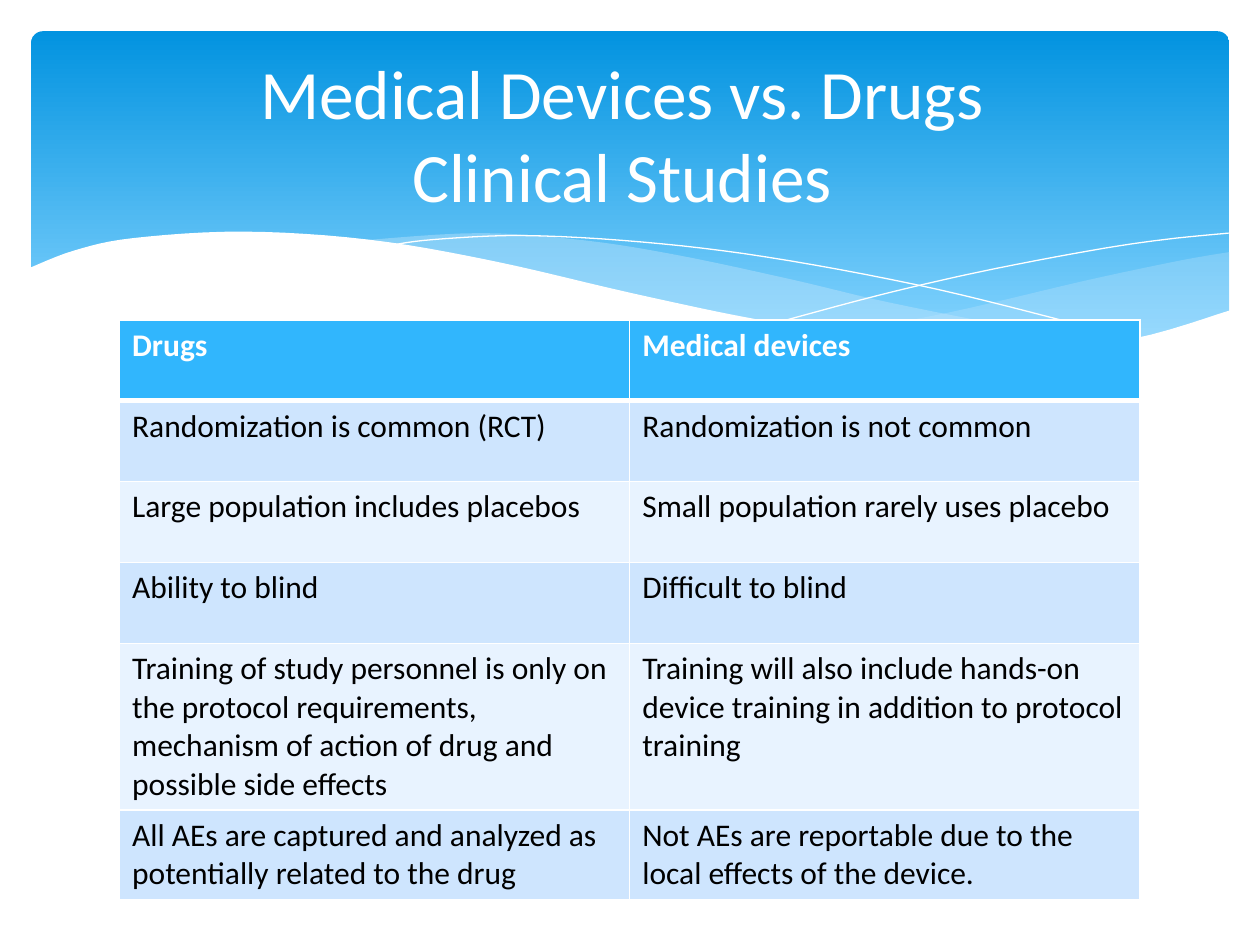
import pptx
import pptx.util
import pptx.dml.color
import pptx.enum.shapes
import pptx.enum.text
import pptx.oxml
import pptx.oxml.ns
from lxml import etree

Cm, Pt = pptx.util.Cm, pptx.util.Pt
RGBColor = pptx.dml.color.RGBColor

FONT = "Calibri"
WHITE = RGBColor(0xFF, 0xFF, 0xFF)
BLACK = RGBColor(0, 0, 0)
BANNER_TOP = RGBColor(0x02, 0x93, 0xE0)
BANNER_BOTTOM = RGBColor(0x83, 0xD3, 0xFE)
WAVE = RGBColor(0xC6, 0xE7, 0xFC)
HEADER = RGBColor(0x31, 0xB6, 0xFD)
BANDS = (RGBColor(0xCE, 0xE5, 0xFE), RGBColor(0xE8, 0xF3, 0xFF))

# Curves are lists of (x, y) anchors in centimetres.
RIGHT_WAVE_TOP = [(24.79, 5.08), (23.75, 5.26), (21.87, 5.66), (19.13, 6.3), (16.79, 6.73)]
RIGHT_WAVE_BOTTOM = [(16.79, 6.73), (18.26, 6.91), (20.07, 7.04), (21.69, 7.01),
                     (23.19, 6.78), (24.79, 6.27)]
MIDDLE_WAVE_TOP = [(22.68, 6.93), (20.5, 6.6), (17.93, 6.1), (15.98, 5.64),
                   (13.74, 5.16), (11.81, 4.85), (9.65, 4.7), (7.26, 4.85)]
MIDDLE_WAVE_BOTTOM = [(7.26, 4.85), (9.19, 5.16), (11.4, 5.64), (14.38, 6.3),
                      (16.89, 6.76), (19, 7.01), (20.78, 7.06), (22.68, 6.93)]
FALLING_LINE = [(7.85, 4.95), (8.74, 4.83), (10.57, 4.75), (12.95, 4.88),
                (15.44, 5.18), (18.47, 5.74), (21.11, 6.38), (23.04, 6.91)]
RISING_LINE = [(15.57, 6.53), (17.65, 5.97), (19.71, 5.49), (22, 5.05),
               (23.47, 4.83), (24.77, 4.7)]
WHITE_WAVE_TOP = [(0.58, 5.41), (1.5, 5.05), (2.69, 4.8), (4.9, 4.67), (7.42, 4.83),
                  (9.93, 5.26), (12.78, 5.92), (15.32, 6.45), (17.98, 6.86),
                  (20.55, 7.04), (22.83, 6.83), (24.82, 6.25)]
WHITE_WAVE_CORNERS = [(24.82, 8.36), (0.58, 8.36)]

COMPARISON = [
    ("Drugs", "Medical devices"),
    ("Randomization is common (RCT)", "Randomization is not common"),
    ("Large population includes placebos", "Small population rarely uses placebo"),
    ("Ability to blind", "Difficult to blind"),
    ("Training of study personnel is only on the protocol requirements, "
     "mechanism of action of drug and possible side effects",
     "Training will also include hands-on device training in addition to protocol training"),
    ("All AEs are captured and analyzed as potentially related to the drug",
     "Not AEs are reportable due to the local effects of the device."),
]


def smooth(anchors, steps=6):
    """Return points along a Catmull-Rom curve through the anchors."""
    padded = [anchors[0], *anchors, anchors[-1]]
    points = []
    for a, b, c, d in zip(padded, padded[1:], padded[2:], padded[3:]):
        for step in range(steps):
            t = step / steps
            points.append(tuple(
                (2 * q + (r - p) * t + (2 * p - 5 * q + 4 * r - s) * t ** 2
                 + (3 * q - p - 3 * r + s) * t ** 3) / 2
                for p, q, r, s in zip(a, b, c, d)))
    return points + [anchors[-1]]


def write_text(frame, text, size, color, bold=False, align=None):
    frame.text = text
    frame.word_wrap = True
    for paragraph in frame.paragraphs:
        paragraph.alignment = align
        for run in paragraph.runs:
            run.font.name = FONT
            run.font.size = Pt(size)
            run.font.bold = bold
            run.font.color.rgb = color


def add_banner(slide):
    banner = slide.shapes.add_shape(
        pptx.enum.shapes.MSO_SHAPE.ROUNDED_RECTANGLE,
        Cm(0.63), Cm(0.63), Cm(24.15), Cm(6.86))
    banner.adjustments[0] = 0.034
    banner.shadow.inherit = False
    banner.line.fill.background()
    banner.fill.gradient()
    banner.fill.gradient_angle = 270
    top, bottom = banner.fill.gradient_stops
    top.color.rgb, top.position = BANNER_TOP, 0
    bottom.color.rgb, bottom.position = BANNER_BOTTOM, 0.9


def add_outline(slide, points, close):
    start, *rest = [(Cm(x), Cm(y)) for x, y in points]
    builder = slide.shapes.build_freeform(*start)
    builder.add_line_segments(rest, close=close)
    outline = builder.convert_to_shape()
    outline.shadow.inherit = False
    return outline


def add_wave(slide, points, color, opacity=100):
    wave = add_outline(slide, points, close=True)
    wave.line.fill.background()
    wave.fill.solid()
    wave.fill.fore_color.rgb = color
    if opacity < 100:
        rgb = wave.fill._xPr.find(".//" + pptx.oxml.ns.qn("a:srgbClr"))
        etree.SubElement(rgb, pptx.oxml.ns.qn("a:alpha"), val=str(opacity * 1000))


def add_hairline(slide, anchors):
    hairline = add_outline(slide, smooth(anchors), close=False)
    hairline.fill.background()
    hairline.line.color.rgb = WHITE
    hairline.line.width = Pt(0)


def add_border(cell, side, width):
    properties = cell._tc.get_or_add_tcPr()
    properties.append(pptx.oxml.parse_xml(
        f'<a:ln{side} {pptx.oxml.ns.nsdecls("a")} w="{Pt(width)}">'
        f'<a:solidFill><a:srgbClr val="{WHITE}"/></a:solidFill></a:ln{side}>'))


def add_comparison(slide):
    table = slide.shapes.add_table(
        len(COMPARISON), 2, Cm(2.41), Cm(6.45), Cm(20.57), Cm(9.78)).table
    for row, texts in enumerate(COMPARISON):
        is_header = row == 0
        widths = {"L": 1, "R": 1, "T": 3 if row == 1 else 1, "B": 3 if is_header else 1}
        for column, text in enumerate(texts):
            cell = table.cell(row, column)
            for side, width in widths.items():
                add_border(cell, side, width)
            cell.fill.solid()
            cell.fill.fore_color.rgb = HEADER if is_header else BANDS[(row - 1) % 2]
            write_text(cell.text_frame, text, size=18, bold=is_header,
                       color=WHITE if is_header else BLACK)


def add_title(slide, text):
    title = slide.shapes.title
    title.left, title.top = Cm(1.27), Cm(0.94)
    title.width, title.height = Cm(22.86), Cm(3.48)
    title.text_frame.auto_size = pptx.enum.text.MSO_AUTO_SIZE.NONE
    title.text_frame.vertical_anchor = pptx.enum.text.MSO_ANCHOR.MIDDLE
    write_text(title.text_frame, text, size=39.6, color=WHITE,
               align=pptx.enum.text.PP_ALIGN.CENTER)
    slide.shapes._spTree.append(title._element)  # bring to front


def main():
    deck = pptx.Presentation()
    deck.slide_width, deck.slide_height = Cm(25.4), Cm(19.05)
    slide = deck.slides.add_slide(deck.slide_layouts[5])
    add_banner(slide)
    add_wave(slide, smooth(RIGHT_WAVE_TOP) + smooth(RIGHT_WAVE_BOTTOM), WAVE, opacity=29)
    add_wave(slide, smooth(MIDDLE_WAVE_TOP) + smooth(MIDDLE_WAVE_BOTTOM), WAVE, opacity=40)
    add_hairline(slide, FALLING_LINE)
    add_hairline(slide, RISING_LINE)
    add_wave(slide, smooth(WHITE_WAVE_TOP) + WHITE_WAVE_CORNERS, WHITE)
    add_comparison(slide)
    add_title(slide, "Medical Devices vs. Drugs \vClinical Studies ")
    deck.save("out.pptx")


if __name__ == "__main__":
    main()
